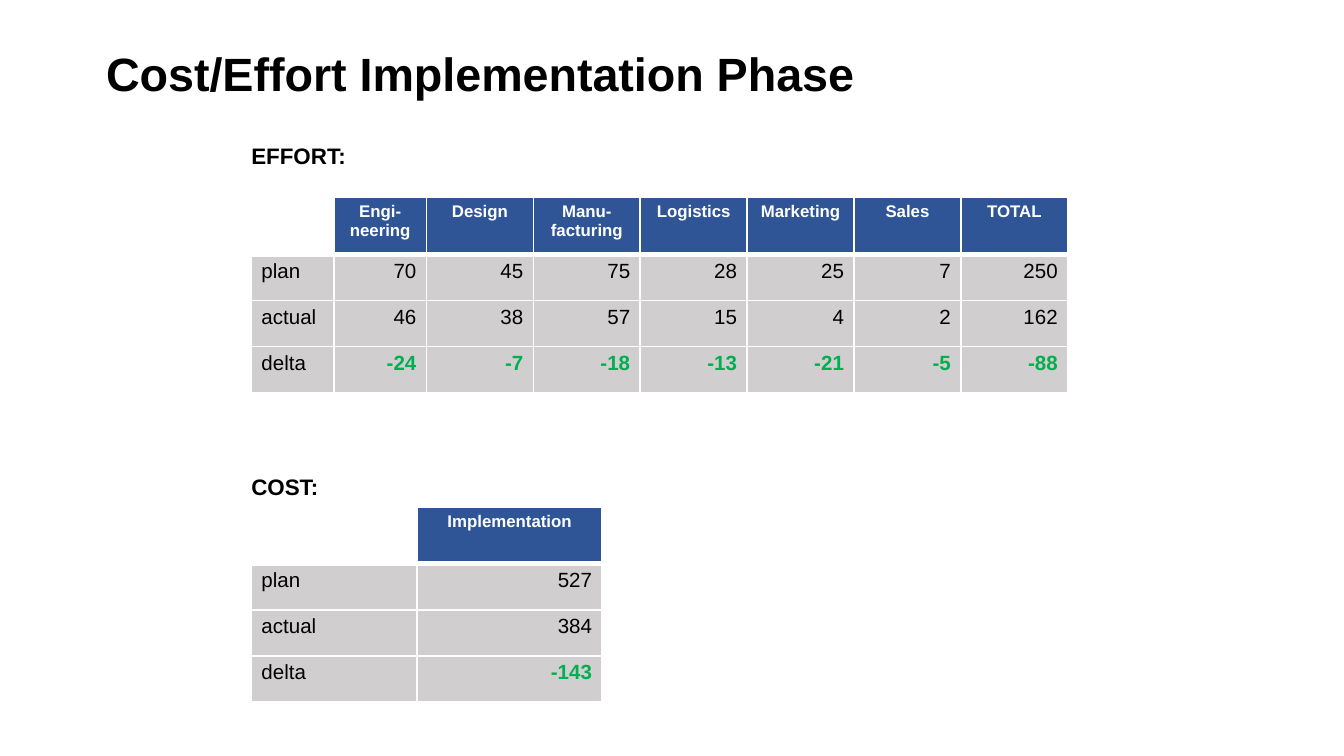
from lxml import etree
from pptx import Presentation
from pptx.dml.color import RGBColor
from pptx.enum.text import MSO_ANCHOR, PP_ALIGN
from pptx.oxml.ns import qn
from pptx.util import Cm, Pt

LEFT, CENTER, RIGHT = PP_ALIGN.LEFT, PP_ALIGN.CENTER, PP_ALIGN.RIGHT
MIDDLE = MSO_ANCHOR.MIDDLE
COLORS = {"text": "000000", "header": "2F5597", "body": "D0CECE",
          "white": "FFFFFF", "saving": "00B050"}
FONT = "Arial"
TITLE_ONLY = 5
HEADER_HEIGHT, ROW_HEIGHT = 1.08, 0.87
TABLE_LEFT, LABEL_LEFT = 4.75, 4.5


def write(frame, text, size=11, color="text", bold=False, align=LEFT, spacing=None):
    """Put one formatted paragraph into a text frame."""
    paragraph = frame.paragraphs[0]
    paragraph.alignment = align
    paragraph.line_spacing = spacing
    run = paragraph.add_run()
    run.text = text
    run.font.name = FONT
    run.font.size = Pt(size)
    run.font.bold = bold
    run.font.color.rgb = RGBColor.from_string(COLORS[color])


class ReportSlide:
    """Style and current slide, with one method per kind of element."""

    def __init__(self, presentation):
        self.slide = presentation.slides.add_slide(presentation.slide_layouts[TITLE_ONLY])

    def title(self, text):
        """Fill and place the title placeholder."""
        title = self.slide.shapes.title
        title.left, title.top, title.width, title.height = Cm(1.75), Cm(0.76), Cm(21.9), Cm(1.35)
        title.text_frame.vertical_anchor = MIDDLE
        write(title.text_frame, text, size=25, bold=True, spacing=0.9)

    def label(self, text, top):
        """Add a bold heading above a table."""
        box = self.slide.shapes.add_textbox(Cm(LABEL_LEFT), Cm(top), Cm(4.7), Cm(0.76))
        box.text_frame.word_wrap = True
        write(box.text_frame, text, size=12, bold=True)

    def border(self, cell, bottom):
        """Draw white lines around a cell."""
        properties = cell._tc.get_or_add_tcPr()
        for side, width in (("L", 1), ("R", 1), ("T", 1), ("B", bottom)):
            line = etree.SubElement(properties, qn(f"a:ln{side}"), w=str(Pt(width)))
            fill = etree.SubElement(line, qn("a:solidFill"))
            etree.SubElement(fill, qn("a:srgbClr"), val=COLORS["white"])

    def cell(self, cell, text, fill, bottom=1, **text_format):
        """Format one table cell."""
        cell.margin_left = cell.margin_right = Cm(0.19)
        cell.margin_top = cell.margin_bottom = Cm(0.1)
        self.border(cell, bottom)
        if text:
            cell.fill.solid()
            cell.fill.fore_color.rgb = RGBColor.from_string(COLORS[fill])
            write(cell.text_frame, text, **text_format)
        else:
            cell.fill.background()

    def comparison(self, top, widths, headings, plan, actual):
        """Add a table of plan, actual and their difference."""
        delta = [spent - planned for planned, spent in zip(plan, actual)]
        records = {"plan": plan, "actual": actual, "delta": delta}
        height = HEADER_HEIGHT + ROW_HEIGHT * len(records)
        table = self.slide.shapes.add_table(
            len(records) + 1, len(widths), Cm(TABLE_LEFT), Cm(top),
            Cm(sum(widths)), Cm(height)).table
        for column, width in zip(table.columns, widths):
            column.width = Cm(width)
        for index, row in enumerate(table.rows):
            row.height = Cm(ROW_HEIGHT if index else HEADER_HEIGHT)
        for column, heading in enumerate(["", *headings]):
            self.cell(table.cell(0, column), heading, "header", bottom=3,
                      size=9, color="white", bold=True, align=CENTER)
        for row, (name, values) in enumerate(records.items(), 1):
            self.cell(table.cell(row, 0), name, "body")
            is_delta = name == "delta"
            for column, value in enumerate(values, 1):
                self.cell(table.cell(row, column), str(value), "body", align=RIGHT,
                          bold=is_delta, color="saving" if is_delta else "text")


def main():
    """Build and save the slide."""
    presentation = Presentation()
    presentation.slide_width, presentation.slide_height = Cm(25.4), Cm(14.29)
    report = ReportSlide(presentation)
    report.title("Cost/Effort Implementation Phase")
    departments = ["Engi-neering", "Design", "Manu-facturing", "Logistics", "Marketing", "Sales"]
    plan = [70, 45, 75, 28, 25, 7]
    actual = [46, 38, 57, 15, 4, 2]
    report.comparison(3.73, [1.56, 1.75] + [2.02] * 6, departments + ["TOTAL"],
                      plan + [sum(plan)], actual + [sum(actual)])
    report.label("EFFORT:", 2.57)
    report.label("COST:", 8.81)
    report.comparison(9.58, [3.13, 3.5], ["Implementation"], [527], [384])
    presentation.save("out.pptx")


if __name__ == "__main__":
    main()
